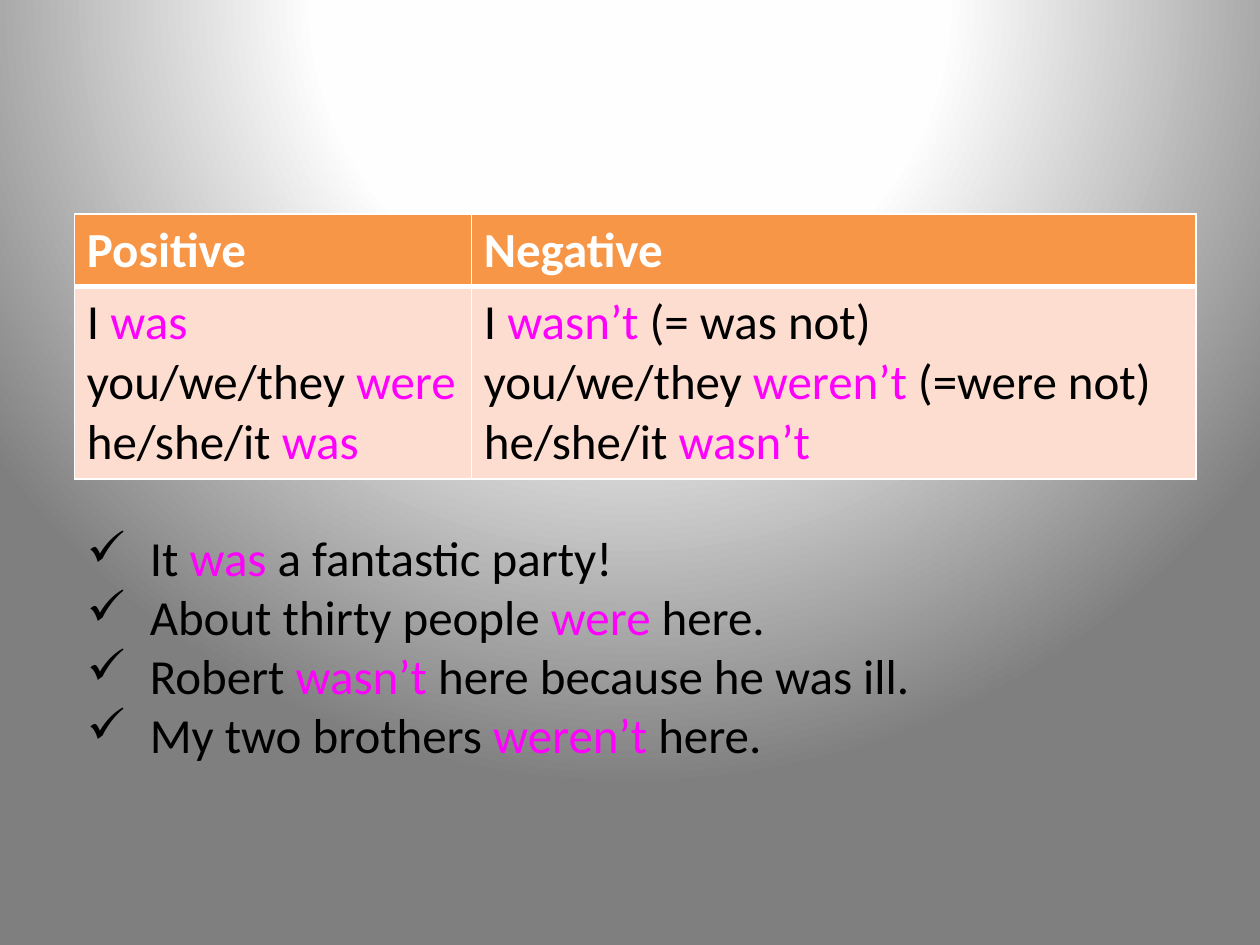
from pptx import Presentation
from pptx.dml.color import RGBColor
from pptx.enum.text import MSO_AUTO_SIZE
from pptx.oxml import parse_xml
from pptx.oxml.ns import nsdecls
from pptx.util import Inches, Pt

COLORS = {
    "header": "F79646",
    "body": "FCDDCF",
    "border": "FFFFFF",
    "header_text": "FFFFFF",
    "text": "000000",
    "verb": "FF00FF",
}
BACKGROUND_STOPS = [(0, "FFFFFF"), (40, "FEFEFE"), (100, "7F7F7F")]

# Text between asterisks is a highlighted verb form.
HEADERS = ["Positive", "Negative"]
FORMS = [
    ["I *was*", "you/we/they *were*", "he/she/it *was*"],
    ["I *wasn’t* (= was not)", "you/we/they *weren’t* (=were not)", "he/she/it *wasn’t*"],
]
EXAMPLES = [
    "It *was* a fantastic party!",
    "About thirty people *were *here.",
    "Robert *wasn’t *here because he was ill.",
    "My two brothers *weren’t *here.",
]


def write_lines(frame, lines, color="text", bold=False):
    """Write one paragraph per line, colouring the parts between asterisks."""
    for number, line in enumerate(lines):
        para = frame.add_paragraph() if number else frame.paragraphs[0]
        for position, part in enumerate(line.split("*")):
            if part:
                span = para.add_run()
                span.text = part
                span.font.name = "Calibri"
                span.font.size = Pt(28)
                span.font.bold = bold
                name = "verb" if position % 2 else color
                span.font.color.rgb = RGBColor.from_string(COLORS[name])


def style_cell(cell, fill, top, bottom):
    """Fill a cell and draw white borders; top and bottom are widths in points."""
    cell.fill.solid()
    cell.fill.fore_color.rgb = RGBColor.from_string(COLORS[fill])
    properties = cell._tc.get_or_add_tcPr()
    sides = [("lnL", 1), ("lnR", 1), ("lnT", top), ("lnB", bottom)]
    for position, (side, width) in enumerate(sides):
        properties.insert(position, parse_xml(
            f'<a:{side} {nsdecls("a")} w="{Pt(width)}"><a:solidFill>'
            f'<a:srgbClr val="{COLORS["border"]}"/></a:solidFill></a:{side}>'))


deck = Presentation()
deck.slide_width, deck.slide_height = Inches(10), Inches(7.5)
page = deck.slides.add_slide(deck.slide_layouts[6])

# Background: a circular gradient centred above the slide
page.background.fill.solid()
background = page._element.cSld.bg.bgPr
stops = "".join(
    f'<a:gs pos="{percent * 1000}"><a:srgbClr val="{color}"/></a:gs>'
    for percent, color in BACKGROUND_STOPS)
background.replace(background[0], parse_xml(
    f'<a:gradFill {nsdecls("a")} rotWithShape="1"><a:gsLst>{stops}</a:gsLst>'
    '<a:path path="circle"><a:fillToRect l="50000" t="-80000" r="50000" b="180000"/>'
    '</a:path></a:gradFill>'))

# Table of verb forms
table = page.shapes.add_table(
    2, 2, Inches(0.59), Inches(1.7), Inches(8.9), Inches(2.07)).table
for column, width in zip(table.columns, (3.15, 5.75)):
    column.width = Inches(width)
for row, height in zip(table.rows, (0.57, 1.5)):
    row.height = Inches(height)
for index, (header, forms) in enumerate(zip(HEADERS, FORMS)):
    header_cell, forms_cell = table.cell(0, index), table.cell(1, index)
    write_lines(header_cell.text_frame, [header], "header_text", bold=True)
    style_cell(header_cell, "header", top=1, bottom=3)
    write_lines(forms_cell.text_frame, forms)
    style_cell(forms_cell, "body", top=3, bottom=1)

# Example sentences with check-mark bullets
box = page.shapes.add_textbox(Inches(0.59), Inches(4.14), Inches(8.58), Inches(1.99))
frame = box.text_frame
frame.word_wrap = True
frame.auto_size = MSO_AUTO_SIZE.SHAPE_TO_FIT_TEXT
write_lines(frame, EXAMPLES)
for para in frame.paragraphs:
    properties = para._p.get_or_add_pPr()
    properties.set("marL", str(Inches(0.5)))
    properties.set("indent", str(Inches(-0.5)))
    properties.append(parse_xml(f'<a:buChar {nsdecls("a")} char="✓"/>'))

deck.save("out.pptx")
